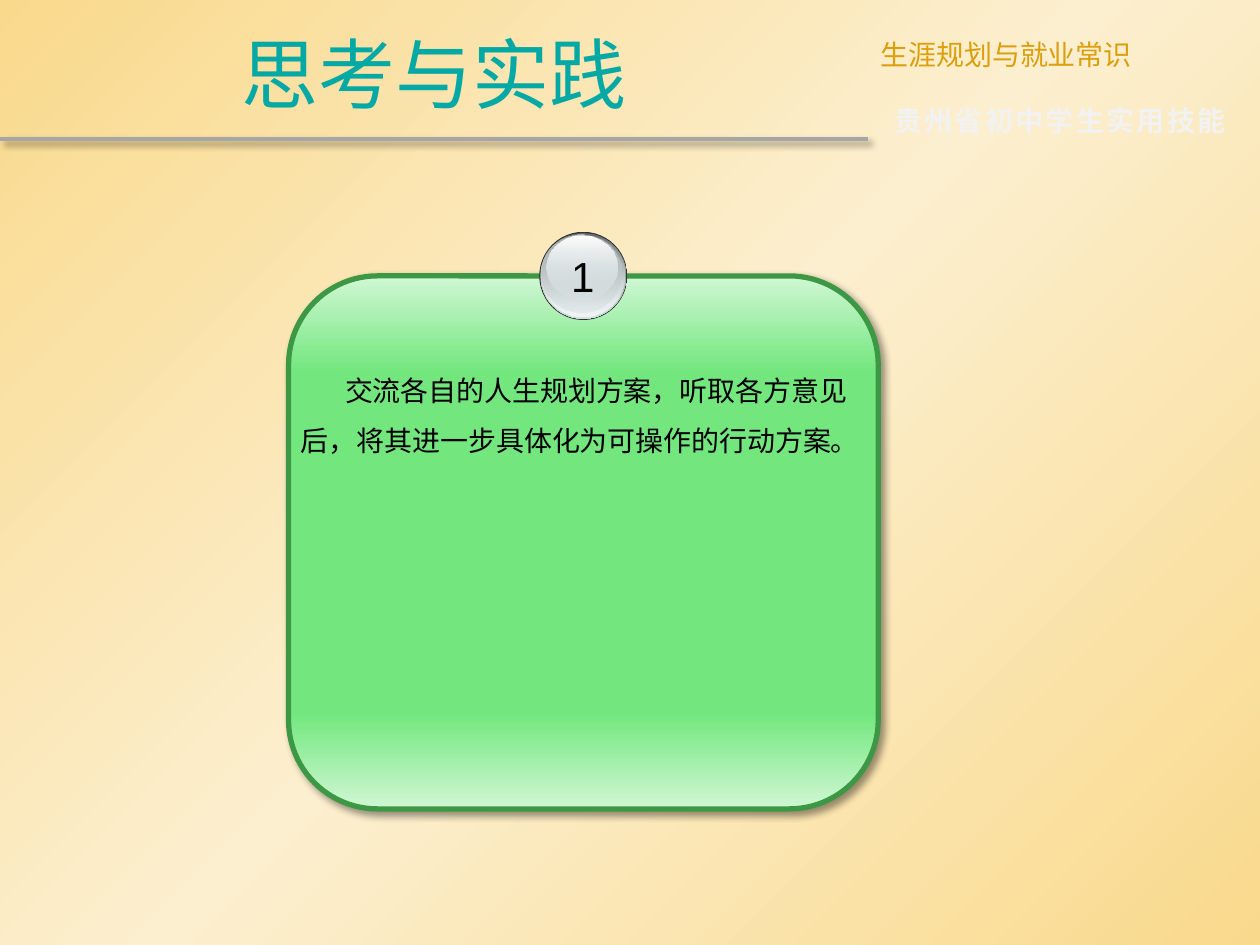
from lxml import etree
from pptx import Presentation
from pptx import util as u
from pptx.dml.color import RGBColor
from pptx.enum import shapes, text
from pptx.oxml.ns import qn

COLUMNS, ROWS = 100, 75
CHINESE_FONT, NUMBER_FONT = "Noto Sans CJK SC", "Arial"

TEAL = RGBColor(0x04, 0xA8, 0xA4)
GOLD = RGBColor(0xDC, 0x9F, 0x0C)
SAND = RGBColor(0xF9, 0xD9, 0x8C)
CREAM = RGBColor(0xFC, 0xEF, 0xCF)
GREY = RGBColor(0xA6, 0xA6, 0xA6)
PALE_GREY = RGBColor(0xF2, 0xF2, 0xF2)
BLACK = RGBColor(0, 0, 0)
WHITE = RGBColor(0xFF, 0xFF, 0xFF)
GREEN = RGBColor(0x73, 0xE7, 0x7E)
PALE_GREEN = RGBColor(0xD0, 0xF7, 0xD4)
DARK_GREEN = RGBColor(0x3C, 0x98, 0x44)
CHARCOAL = RGBColor(0x33, 0x33, 0x33)
SLATE = RGBColor(0x63, 0x68, 0x69)
STEEL = RGBColor(0xAA, 0xB2, 0xB3)
SILVER = RGBColor(0xD6, 0xE1, 0xE2)
MIST = RGBColor(0xF1, 0xF5, 0xF5)


def add_child(parent, tag, **attributes):
    values = {name: str(value) for name, value in attributes.items()}
    return etree.SubElement(parent, qn(tag), values)


def add_color(parent, color, opacity=100):
    element = add_child(parent, "a:srgbClr", val=color)
    if opacity < 100:
        add_child(element, "a:alpha", val=opacity * 1000)


def set_gradient(properties, stops, angle):
    """Replace an empty fill by stops of (position, color[, opacity])."""
    empty = properties.find(qn("a:noFill"))
    gradient = etree.Element(qn("a:gradFill"), rotWithShape="1")
    stop_list = add_child(gradient, "a:gsLst")
    for position, *color in stops:
        add_color(add_child(stop_list, "a:gs", pos=position * 1000), *color)
    add_child(gradient, "a:lin", ang=angle * 60000, scaled=0)
    properties.replace(empty, gradient)


def set_effects(properties, shadow):
    effects = add_child(properties, "a:effectLst")
    if shadow:
        outer = add_child(effects, "a:outerShdw", blurRad=u.Pt(4), dist=u.Pt(3),
                          dir=45 * 60000, algn="tl", rotWithShape=0)
        add_color(outer, BLACK, 40)


class SlideBuilder:
    def __init__(self, presentation):
        self.width = presentation.slide_width
        self.height = presentation.slide_height
        self.slide = presentation.slides.add_slide(presentation.slide_layouts[5])

    def box(self, left, top, width, height):
        """Turn columns and rows into slide lengths."""
        return (round(left * self.width / COLUMNS), round(top * self.height / ROWS),
                round(width * self.width / COLUMNS), round(height * self.height / ROWS))

    def background(self, stops, angle):
        self.slide.background.fill.background()
        properties = self.slide.element.find(".//" + qn("p:bgPr"))
        set_gradient(properties, stops, angle)

    def set_text(self, shape, words, size, color, font=CHINESE_FONT, bold=False,
                 align=text.PP_ALIGN.LEFT, anchor=text.MSO_ANCHOR.TOP, wrap=True,
                 line_spacing=None, indent=0, tracking=0):
        frame = shape.text_frame
        frame.word_wrap = wrap
        frame.vertical_anchor = anchor
        frame.auto_size = text.MSO_AUTO_SIZE.NONE
        paragraph = frame.paragraphs[0]
        paragraph.text = words
        paragraph.alignment = align
        paragraph.line_spacing = line_spacing
        paragraph.font.size = u.Pt(size)
        paragraph.font.bold = bold
        paragraph.font.color.rgb = color
        paragraph.font.name = font
        properties = paragraph._p.pPr
        properties.set("indent", str(self.box(indent, 0, 0, 0)[0]))
        defaults = properties.find(qn("a:defRPr"))
        add_child(defaults, "a:ea", typeface=font)
        if tracking:
            defaults.set("spc", str(round(tracking * 100)))

    def title(self, words, place, **style):
        title = self.slide.shapes.title
        title.left, title.top, title.width, title.height = self.box(*place)
        self.set_text(title, words, align=text.PP_ALIGN.CENTER,
                      anchor=text.MSO_ANCHOR.MIDDLE, **style)

    def text_box(self, words, place, group=None, **style):
        parent = group or self.slide
        self.set_text(parent.shapes.add_textbox(*self.box(*place)), words, **style)

    def rule(self, left, right, row, color, weight):
        start_x, y, length, _ = self.box(left, row, right - left, 0)
        line = self.slide.shapes.add_connector(
            shapes.MSO_CONNECTOR.STRAIGHT, start_x, y, start_x + length, y)
        line.line.color.rgb = color
        line.line.width = u.Pt(weight)
        set_effects(line.element.spPr, shadow=True)

    def shape(self, kind, place, stops, group=None, outline=None, weight=0,
              shadow=False):
        parent = group or self.slide
        shape = parent.shapes.add_shape(kind, *self.box(*place))
        shape.fill.background()
        set_gradient(shape.element.spPr, stops, 90)
        if outline is None:
            shape.line.fill.background()
        else:
            shape.line.color.rgb = outline
            shape.line.width = u.Pt(weight)
        set_effects(shape.element.spPr, shadow)

    def badge(self, number, layers, place):
        """Stack the glossy circles of a numbered ball."""
        group = self.slide.shapes.add_group_shape()
        for layer_place, stops in layers:
            self.shape(shapes.MSO_SHAPE.OVAL, layer_place, stops, group)
        self.text_box(number, place, group, size=24, color=BLACK,
                      font=NUMBER_FONT, align=text.PP_ALIGN.CENTER, wrap=False)


BADGE_LAYERS = [
    ((42.8, 18.4, 7, 7), [(0, CHARCOAL), (100, CHARCOAL)]),
    ((42.9, 18.5, 6.8, 6.8), [(0, SLATE), (100, SILVER)]),
    ((42.9, 18.5, 6.7, 6.6), [(0, SILVER, 0), (100, MIST)]),
    ((43, 18.6, 6.3, 6.2), [(0, STEEL), (100, SILVER, 48)]),
    ((43.4, 18.7, 5.6, 5), [(0, WHITE), (100, SILVER, 38)]),
]


def main():
    presentation = Presentation()
    presentation.slide_width, presentation.slide_height = u.Inches(10), u.Inches(7.5)
    builder = SlideBuilder(presentation)
    builder.background([(0, SAND), (50, CREAM), (100, SAND)], 45)

    header_width = 68.9
    builder.rule(0, header_width, 11, GREY, 2.25)
    builder.title("思考与实践", (0, 0.7, header_width, 10.2), size=44, color=TEAL)
    builder.text_box("生涯规划与就业常识", (header_width, 2.5, 31.1, 3.7),
                     size=16, color=GOLD, align=text.PP_ALIGN.JUSTIFY)
    builder.text_box("贵州省初中学生实用技能", (70, 7.7, 30, 3.7), size=16,
                     color=PALE_GREY, bold=True, tracking=1.4, wrap=False)

    card_left, card_width = 22.9, 46.8
    builder.shape(shapes.MSO_SHAPE.ROUNDED_RECTANGLE,
                  (card_left, 21.9, card_width, 42.3),
                  [(0, PALE_GREEN), (18, GREEN), (82, GREEN), (100, PALE_GREEN)],
                  outline=DARK_GREEN, weight=3, shadow=True)
    builder.text_box("交流各自的人生规划方案，听取各方意见后，将其进一步具体化为可操作的行动方案。",
                     (card_left, 27.8, card_width, 8.6), size=16, color=BLACK,
                     line_spacing=1.5, indent=3.5)
    builder.badge("1", BADGE_LAYERS, (44.3, 19.4, 3.9, 5))
    presentation.save("out.pptx")


if __name__ == "__main__":
    main()
